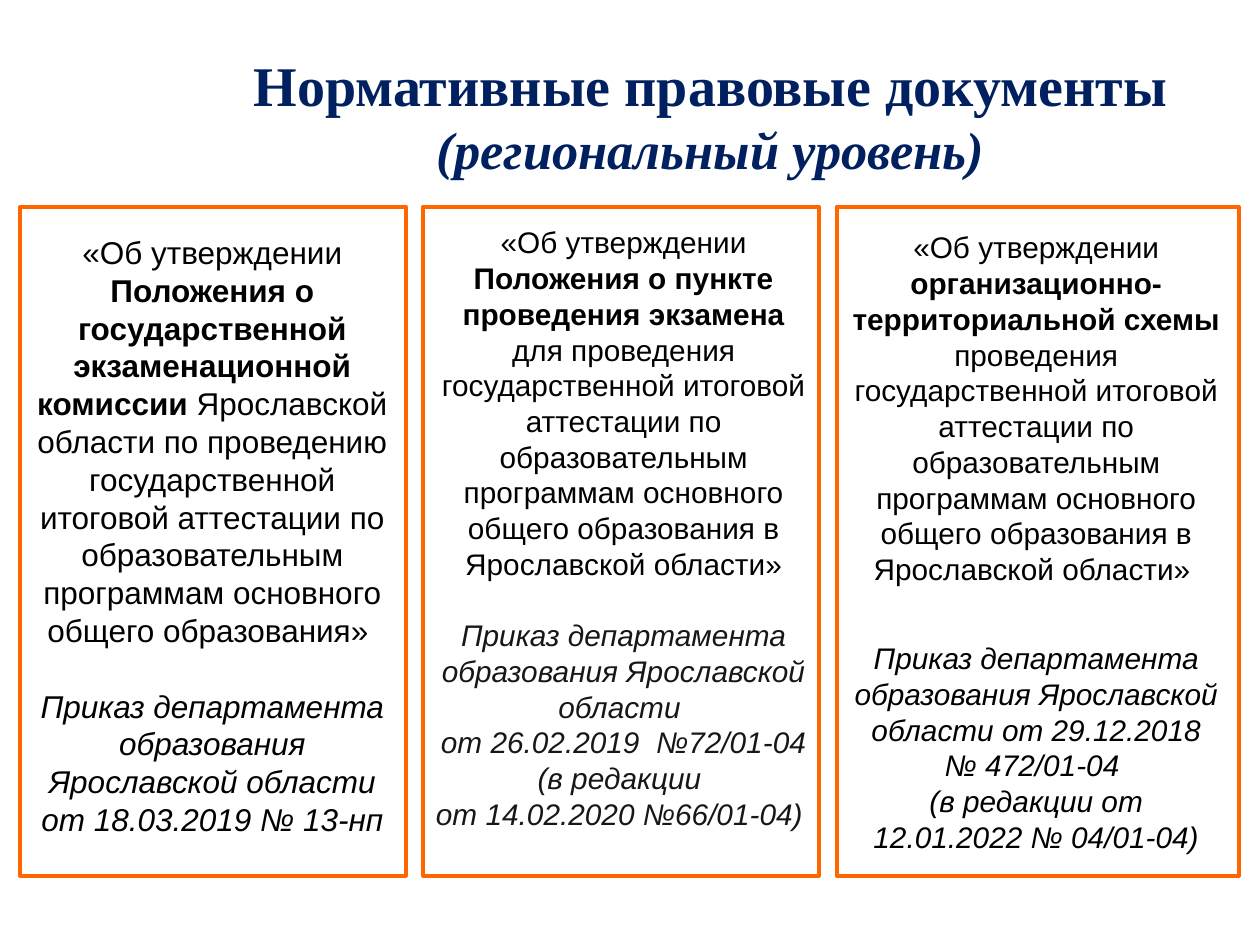
"""Builds a slide with three framed columns of regional regulatory documents."""
from pptx import Presentation
from pptx.dml.color import RGBColor
from pptx.enum.shapes import MSO_SHAPE
from pptx.enum.text import MSO_ANCHOR, MSO_AUTO_SIZE, PP_ALIGN
from pptx.util import Inches, Pt

COLORS = {"title": "002060", "text": "000000", "order": "181717", "frame": "FF6600"}


def add_run(p, text, color, **fmt):
    r = p.add_run()
    r.text = text
    r.font.color.rgb = RGBColor.from_string(COLORS[color])
    for name, value in fmt.items():
        setattr(r.font, name, value)


prs = Presentation()
prs.slide_width, prs.slide_height = Inches(10), Inches(7.5)
col, row = prs.slide_width / 100, prs.slide_height / 100


def place(x, y, w, h):
    return int(x * col), int(y * row), int(w * col), int(h * row)


s = prs.slides.add_slide(prs.slide_layouts[5])
title = s.shapes.title
title.left, title.top, title.width, title.height = place(11.4, 3.87, 90, 16.67)
tf = title.text_frame
for name, value in {"word_wrap": True, "auto_size": MSO_AUTO_SIZE.NONE,
                    "vertical_anchor": MSO_ANCHOR.MIDDLE}.items():
    setattr(tf, name, value)
p = tf.paragraphs[0]
p.alignment = PP_ALIGN.CENTER
for text, size, italic in [("Нормативные правовые документы ", 32, False),
                           ("(региональный уровень)", 30, True)]:
    add_run(p, text, "title", name="Times New Roman", size=Pt(size), bold=True, italic=italic)

documents = [
    {"frame_w": 30.6, "text": (0, 24, 30.5, 66), "size": 18, "gap": 21.6, "color": "text",
     "subject": "Положения о государственной экзаменационной комиссии ",
     "rest": "Ярославской области по проведению государственной итоговой аттестации "
             "по образовательным программам основного общего образования» ",
     "order": ["Приказ департамента образования Ярославской области от 18.03.2019 № 13-нп"]},
    {"frame_w": 31.4, "text": (-0.1, 23.07, 32, 66.13), "size": 17, "gap": 20.4, "color": "order",
     "subject": "Положения о пункте проведения экзамена ",
     "rest": "для проведения государственной итоговой аттестации по образовательным "
             "программам основного общего образования в Ярославской области»",
     "order": ["Приказ департамента образования Ярославской области ",
               "от 26.02.2019  №72/01-04 (в редакции ",
               "от 14.02.2020 №66/01-04) "]},
    {"frame_w": 31.9, "text": (0.2, 23.6, 31.3, 71.73), "size": 17, "gap": 30.6, "color": "text",
     "subject": "организационно-территориальной схемы ",
     "rest": "проведения государственной итоговой аттестации по образовательным "
             "программам основного общего образования в Ярославской области» ",
     "order": ["Приказ департамента образования Ярославской области от 29.12.2018 № 472/01-04 ",
               "(в редакции от 12.01.2022 № 04/01-04)"]},
]

left, gutter = 1.6, 1.4
for doc in documents:
    sp = s.shapes.add_shape(MSO_SHAPE.RECTANGLE, *place(left, 21.87, doc["frame_w"], 70.8))
    sp.shadow.inherit = False
    sp.fill.background()
    sp.line.color.rgb = RGBColor.from_string(COLORS["frame"])
    sp.line.width = Pt(2.25)

    dx, top, width, height = doc["text"]
    tf = s.shapes.add_textbox(*place(left + dx, top, width, height)).text_frame
    tf.word_wrap = True
    tf.auto_size = MSO_AUTO_SIZE.SHAPE_TO_FIT_TEXT
    font = {"name": "Arial", "size": Pt(doc["size"])}
    p = tf.paragraphs[0]
    p.alignment = PP_ALIGN.CENTER
    for text, bold in [("«Об утверждении ", False), (doc["subject"], True), (doc["rest"], False)]:
        add_run(p, text, "text", bold=bold, **font)
    for i, text in enumerate(doc["order"]):
        p = tf.add_paragraph()
        p.alignment = PP_ALIGN.CENTER
        if i == 0:
            p.space_before = Pt(doc["gap"])
        add_run(p, text, doc["color"], italic=True, **font)
    left += doc["frame_w"] + gutter

prs.save("out.pptx")
